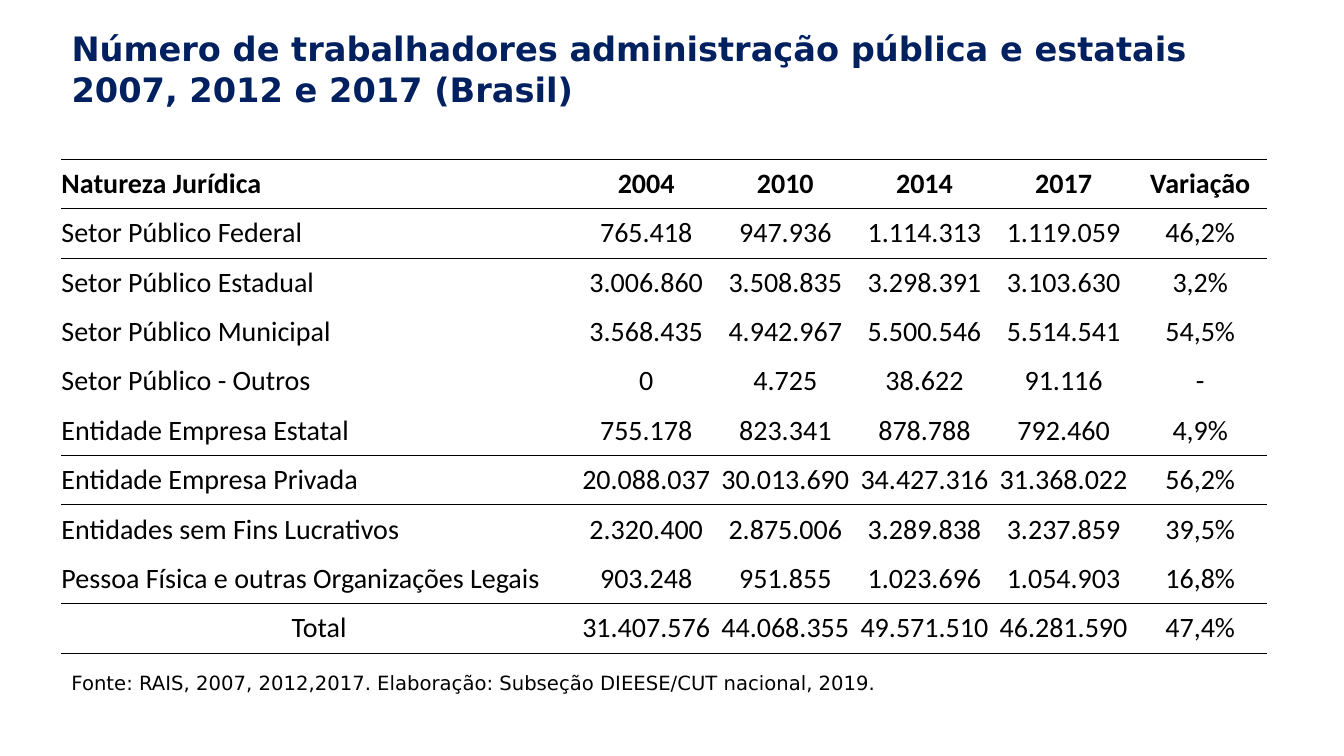
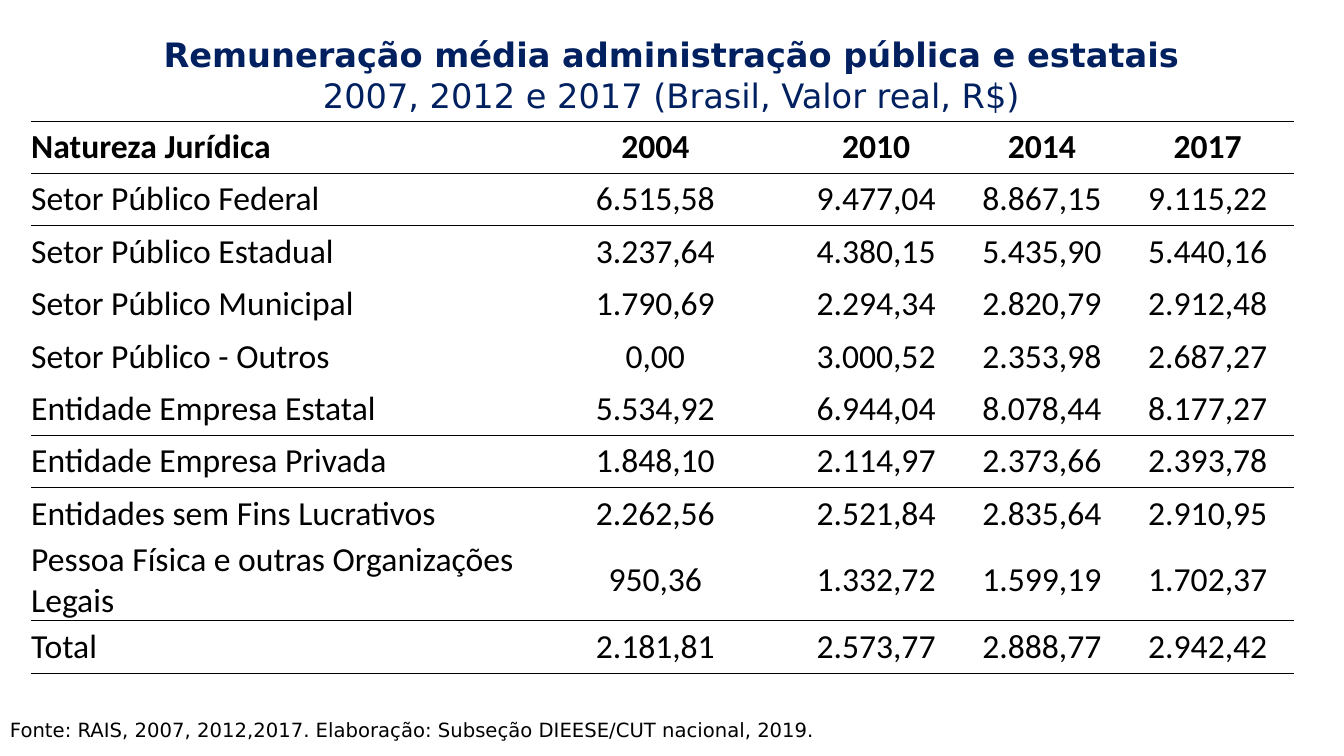
from dataclasses import dataclass

from lxml import etree
from pptx import Presentation
from pptx.dml.color import RGBColor
from pptx.enum.text import MSO_ANCHOR, MSO_AUTO_SIZE, PP_ALIGN
from pptx.oxml.ns import qn
from pptx.slide import Slide
from pptx.table import _Cell
from pptx.text.text import TextFrame, _Paragraph
from pptx.util import Pt

LEFT, CENTER = PP_ALIGN.LEFT, PP_ALIGN.CENTER
TOP, MIDDLE = MSO_ANCHOR.TOP, MSO_ANCHOR.MIDDLE
GROW = MSO_AUTO_SIZE.SHAPE_TO_FIT_TEXT

EMU_PER_PX = 9144  # 100 px to the inch
TITLE_ONLY_LAYOUT = 5
NO_STYLE_NO_GRID = "{2D5ABB26-0587-4C30-8999-92F81FD0307C}"


# Theme: colours, fonts and type sizes
@dataclass(frozen=True)
class Theme:
    title_color: str = "002060"
    ink: str = "000000"
    heading_font: str = "DejaVu Sans"
    table_font: str = "Calibri"
    title_size: int = 24
    source_size: int = 14


@dataclass(frozen=True)
class Box:
    left: int
    top: int
    width: int
    height: int

    def emu(self) -> list[int]:
        return [px(n) for n in (self.left, self.top, self.width, self.height)]


@dataclass(frozen=True)
class TableSlide:
    title: tuple[str, str]
    title_box: Box
    title_align: PP_ALIGN
    subtitle_bold: bool
    table_left: int
    table_top: int
    column_widths: tuple[int, ...]
    row_heights: tuple[int, ...]
    font_size: int
    total_align: PP_ALIGN
    source_box: Box
    headers: tuple[str, ...]
    values: tuple[str, ...]  # one line of figures for each sector


THEME = Theme()
SOURCE = "Fonte: RAIS, 2007, 2012,2017. Elaboração: Subseção DIEESE/CUT nacional, 2019."
YEARS = ("2004", "2010", "2014", "2017")
SECTORS = (
    "Setor Público Federal",
    "Setor Público Estadual",
    "Setor Público Municipal",
    "Setor Público - Outros",
    "Entidade Empresa Estatal",
    "Entidade Empresa Privada",
    "Entidades sem Fins Lucrativos",
    "Pessoa Física e outras Organizações Legais",
    "Total",
)
# Rule width in points below each row; -1 is the top edge of the table
RULES_BELOW = {-1: 0.5, 0: 0.5, 5: 1, 8: 0.5, 9: 0.5}

WORKERS = TableSlide(
    title=("Número de trabalhadores administração pública e estatais",
           "2007, 2012 e 2017 (Brasil)"),
    title_box=Box(61, 23, 1132, 91),
    title_align=LEFT,
    subtitle_bold=True,
    table_left=61,
    table_top=158,
    column_widths=(511, 138, 138, 138, 138, 133),
    row_heights=(49,) * 10,
    font_size=20,
    total_align=CENTER,
    source_box=Box(61, 649, 995, 42),
    headers=("Natureza Jurídica", *YEARS, "Variação"),
    values=(
        "765.418 947.936 1.114.313 1.119.059 46,2%",
        "3.006.860 3.508.835 3.298.391 3.103.630 3,2%",
        "3.568.435 4.942.967 5.500.546 5.514.541 54,5%",
        "0 4.725 38.622 91.116 -",
        "755.178 823.341 878.788 792.460 4,9%",
        "20.088.037 30.013.690 34.427.316 31.368.022 56,2%",
        "2.320.400 2.875.006 3.289.838 3.237.859 39,5%",
        "903.248 951.855 1.023.696 1.054.903 16,8%",
        "31.407.576 44.068.355 49.571.510 46.281.590 47,4%",
    ),
)

PAY = TableSlide(
    title=("Remuneração média administração pública e estatais",
           "2007, 2012 e 2017 (Brasil, Valor real, R$)"),
    title_box=Box(83, 29, 1166, 91),
    title_align=CENTER,
    subtitle_bold=False,
    table_left=31,
    table_top=120,
    column_widths=(486, 266, 172, 157, 172),
    row_heights=(52,) * 8 + (76, 52),
    font_size=24,
    total_align=LEFT,
    source_box=Box(0, 696, 995, 42),
    headers=("Natureza Jurídica", *YEARS),
    values=(
        "6.515,58 9.477,04 8.867,15 9.115,22",
        "3.237,64 4.380,15 5.435,90 5.440,16",
        "1.790,69 2.294,34 2.820,79 2.912,48",
        "0,00 3.000,52 2.353,98 2.687,27",
        "5.534,92 6.944,04 8.078,44 8.177,27",
        "1.848,10 2.114,97 2.373,66 2.393,78",
        "2.262,56 2.521,84 2.835,64 2.910,95",
        "950,36 1.332,72 1.599,19 1.702,37",
        "2.181,81 2.573,77 2.888,77 2.942,42",
    ),
)


def px(length: int) -> int:
    return length * EMU_PER_PX


def format_paragraph(para: _Paragraph, font: str, size: int, color: str,
                     bold: bool = False, align: PP_ALIGN = LEFT) -> None:
    para.alignment = align
    for span in para.runs:
        span.font.name = font
        span.font.size = Pt(size)
        span.font.bold = bold
        span.font.color.rgb = RGBColor.from_string(color)


def set_growing_text(frame: TextFrame, text: str) -> None:
    frame.text = text
    frame.word_wrap = True
    frame.auto_size = GROW
    frame.vertical_anchor = TOP


def add_title(page: Slide, spec_slide: TableSlide) -> None:
    title = page.shapes.title
    title.left, title.top, title.width, title.height = spec_slide.title_box.emu()
    set_growing_text(title.text_frame, "\n".join(spec_slide.title))
    for para, bold in zip(title.text_frame.paragraphs, (True, spec_slide.subtitle_bold)):
        format_paragraph(para, THEME.heading_font, THEME.title_size,
                         THEME.title_color, bold, spec_slide.title_align)


def add_source(page: Slide, box: Box) -> None:
    frame = page.shapes.add_textbox(*box.emu()).text_frame
    set_growing_text(frame, SOURCE)
    para = frame.paragraphs[0]
    para.line_spacing = 1.5
    format_paragraph(para, THEME.heading_font, THEME.source_size, THEME.ink)


def add_cell_rule(cell: _Cell, side: str, width: float) -> None:
    properties = cell._tc.get_or_add_tcPr()
    line = etree.SubElement(properties, qn(f"a:{side}"), w=str(Pt(width)))
    fill = etree.SubElement(line, qn("a:solidFill"))
    etree.SubElement(fill, qn("a:srgbClr"), val=THEME.ink)


def fill_cell(cell: _Cell, text: str, row: int, size: int, align: PP_ALIGN) -> None:
    cell.text = text
    cell.vertical_anchor = MIDDLE
    cell.margin_left = cell.margin_right = cell.margin_top = cell.margin_bottom = 0
    format_paragraph(cell.text_frame.paragraphs[0], THEME.table_font, size,
                     THEME.ink, row == 0, align)
    # Borders come before the fill in the cell properties
    for side, edge in (("lnT", row - 1), ("lnB", row)):
        if edge in RULES_BELOW:
            add_cell_rule(cell, side, RULES_BELOW[edge])
    cell.fill.background()


def add_figures(page: Slide, content: TableSlide) -> None:
    rows = [content.headers]
    rows += [(sector, *line.split()) for sector, line in zip(SECTORS, content.values)]
    box = Box(content.table_left, content.table_top,
              sum(content.column_widths), sum(content.row_heights))
    table = page.shapes.add_table(len(rows), len(content.headers), *box.emu()).table
    table.first_row = table.horz_banding = False
    table._tbl.tblPr.find(qn("a:tableStyleId")).text = NO_STYLE_NO_GRID
    for column, width in zip(table.columns, content.column_widths):
        column.width = px(width)
    for table_row, height in zip(table.rows, content.row_heights):
        table_row.height = px(height)
    for row, texts in enumerate(rows):
        label_align = content.total_align if texts[0] == "Total" else LEFT
        for column, text in enumerate(texts):
            align = CENTER if column else label_align
            fill_cell(table.cell(row, column), text, row, content.font_size, align)


def main() -> None:
    deck = Presentation()
    deck.slide_width, deck.slide_height = px(1333), px(750)
    for content in (WORKERS, PAY):
        page = deck.slides.add_slide(deck.slide_layouts[TITLE_ONLY_LAYOUT])
        add_source(page, content.source_box)
        add_figures(page, content)
        add_title(page, content)
    deck.save("out.pptx")


if __name__ == "__main__":
    main()
